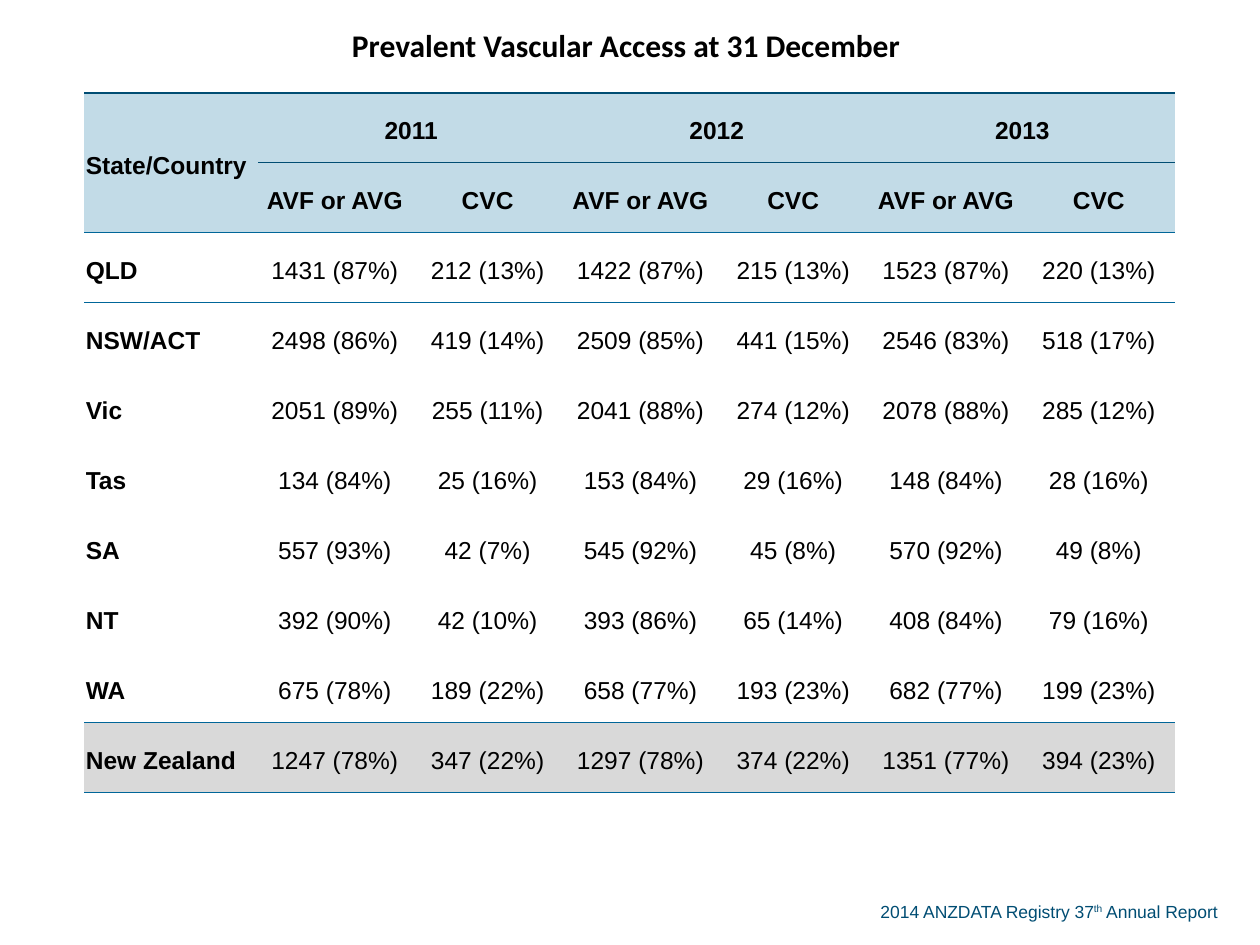
from dataclasses import dataclass
from lxml.etree import SubElement
from pptx import Presentation
from pptx.dml.color import RGBColor as RGB
from pptx.enum.text import MSO_ANCHOR as Anchor, MSO_AUTO_SIZE as AutoSize, PP_ALIGN as Align
from pptx.oxml.ns import qn
from pptx.util import Cm, Pt


@dataclass(frozen=True)
class Theme:
    navy: str = "004D73"
    rule: str = "006699"
    header: str = "C2DBE7"
    total: str = "D9D9D9"
    text: str = "000000"
    title_font: str = "Calibri"
    body_font: str = "Arial"
    title_size: int = 18
    body_size: int = 14
    footer_size: int = 10


theme = Theme()
NO_STYLE = "{2D5ABB26-0587-4C30-8999-92F81FD0307C}"
YEARS = ["2011", "2012", "2013"]
ACCESS = ["AVF or AVG", "CVC"]
REGIONS = [
    ["QLD", "1431 (87%)", "212 (13%)", "1422 (87%)", "215 (13%)", "1523 (87%)", "220 (13%)"],
    ["NSW/ACT", "2498 (86%)", "419 (14%)", "2509 (85%)", "441 (15%)", "2546 (83%)", "518 (17%)"],
    ["Vic", "2051 (89%)", "255 (11%)", "2041 (88%)", "274 (12%)", "2078 (88%)", "285 (12%)"],
    ["Tas", "134 (84%)", "25 (16%)", "153 (84%)", "29 (16%)", "148 (84%)", "28 (16%)"],
    ["SA", "557 (93%)", "42 (7%)", "545 (92%)", "45 (8%)", "570 (92%)", "49 (8%)"],
    ["NT", "392 (90%)", "42 (10%)", "393 (86%)", "65 (14%)", "408 (84%)", "79 (16%)"],
    ["WA", "675 (78%)", "189 (22%)", "658 (77%)", "193 (23%)", "682 (77%)", "199 (23%)"],
    ["New Zealand", "1247 (78%)", "347 (22%)", "1297 (78%)", "374 (22%)", "1351 (77%)", "394 (23%)"],
]
title_row = ["Prevalent Vascular Access at 31 December "] + [""] * 6
year_row = ["State/Country"] + [text for year in YEARS for text in (year, "")]
access_row = [""] + ACCESS * len(YEARS)
rows = [title_row, year_row, access_row] + REGIONS
last = len(rows) - 1
fills = {1: theme.header, 2: theme.header, last: theme.total}
rules = {0: (theme.navy, 1), 2: (theme.rule, 0.5), last - 1: (theme.rule, 0.5), last: (theme.rule, 0.5)}


def add_run(p, text, font, size, color, bold=False):
    r = p.add_run()
    r.text = text
    for name, value in {"name": font, "size": Pt(size), "bold": bold}.items():
        setattr(r.font, name, value)
    r.font.color.rgb = RGB.from_string(color)
    return r


def add_border(cell, side, color, width):
    ln = SubElement(cell._tc.get_or_add_tcPr(), qn(f"a:{side}"), w=str(Pt(width)))
    SubElement(SubElement(ln, qn("a:solidFill")), qn("a:srgbClr"), val=color)


prs = Presentation()
prs.slide_width, prs.slide_height = Cm(25.4), Cm(19.05)
s = prs.slides.add_slide(prs.slide_layouts[6])

table = s.shapes.add_table(len(rows), 7, Cm(1.7), Cm(0), Cm(21.99), Cm(15.97)).table
tbl_pr = table._tbl.tblPr
tbl_pr.find(qn("a:tableStyleId")).text = NO_STYLE
table.first_row = table.horz_banding = False
for c, column in enumerate(table.columns):
    column.width = Cm(3.08 if c else 3.51)
for i, row in enumerate(table.rows):
    row.height = Cm(1.41 if i else 1.87)

table.cell(0, 0).merge(table.cell(0, 6))
table.cell(1, 0).merge(table.cell(2, 0))
for c in range(1, 7, 2):
    table.cell(1, c).merge(table.cell(1, c + 1))

cell_format = {
    "margin_left": Cm(0.03), "margin_right": Cm(0.03), "margin_top": Cm(0.03),
    "margin_bottom": Cm(0), "vertical_anchor": Anchor.MIDDLE,
}
for i, row in enumerate(rows):
    for c, text in enumerate(row):
        cell = table.cell(i, c)
        for name, value in cell_format.items():
            setattr(cell, name, value)
        bottom = i + cell.span_height - 1 if cell.is_merge_origin else i
        for side, edge in (("lnT", i - 1), ("lnB", bottom)):
            if edge in rules:
                add_border(cell, side, *rules[edge])
        if i in fills:
            cell.fill.solid()
            cell.fill.fore_color.rgb = RGB.from_string(fills[i])
        else:
            cell.fill.background()
        if not text:
            continue
        p = cell.text_frame.paragraphs[0]
        p.alignment = Align.LEFT if i and c == 0 else Align.CENTER
        if i == 0:
            add_run(p, text, theme.title_font, theme.title_size, theme.text, True)
        else:
            p.line_spacing, p.space_after = 1.19, Pt(14)
            add_run(p, text, theme.body_font, theme.body_size, theme.text, i < 3 or c == 0)

tf = s.shapes.add_textbox(Cm(17.5), Cm(18.03), Cm(7.6), Cm(0.68)).text_frame
tf.word_wrap, tf.auto_size = True, AutoSize.SHAPE_TO_FIT_TEXT
p = tf.paragraphs[0]
for text, baseline in (("2014 ANZDATA Registry 37", 0), ("th", 30000), (" Annual Report", 0)):
    r = add_run(p, text, theme.body_font, theme.footer_size, theme.navy)
    if baseline:
        r.font._element.set("baseline", str(baseline))

prs.save("out.pptx")
